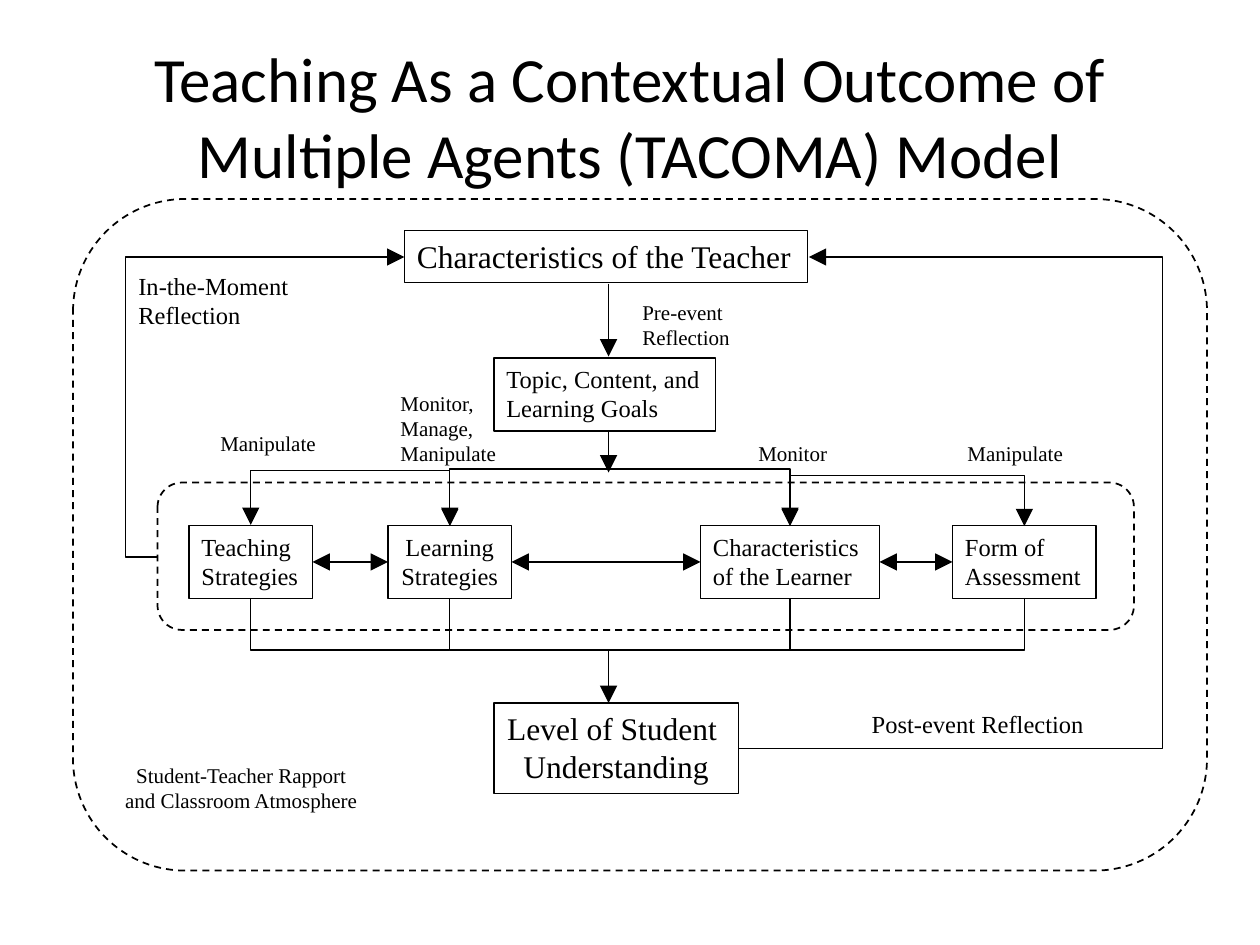
import pptx
import pptx.dml.color
import pptx.enum.dml
import pptx.enum.shapes
import pptx.enum.text
import pptx.oxml
import pptx.util
from pptx.util import Inches

BLACK = pptx.dml.color.RGBColor(0, 0, 0)
TITLE_FONT = "Calibri"
BODY_FONT = "Times New Roman"
LEFT = pptx.enum.text.PP_ALIGN.LEFT
CENTER = pptx.enum.text.PP_ALIGN.CENTER
SHAPES = pptx.enum.shapes.MSO_SHAPE
CONNECTORS = pptx.enum.shapes.MSO_CONNECTOR
FLAT = 0.01


def write_text(shape, text, size, align=LEFT, wrap=False, font=BODY_FONT):
    frame = shape.text_frame
    frame.text = text
    frame.word_wrap = wrap
    for paragraph in frame.paragraphs:
        paragraph.alignment = align
        for run in paragraph.runs:
            run.font.name = font
            run.font.size = pptx.util.Pt(size)
            run.font.color.rgb = BLACK


def add_outline(slide, kind, left, top, width, height, weight=1.0, dashed=False):
    shape = slide.shapes.add_shape(
        kind, Inches(left), Inches(top), Inches(width), Inches(height))
    shape.shadow.inherit = False
    shape.fill.background()
    shape.line.color.rgb = BLACK
    shape.line.width = pptx.util.Pt(weight)
    if dashed:
        shape.line.dash_style = pptx.enum.dml.MSO_LINE.DASH
    return shape


def add_box(slide, text, left, top, width, height, size=14, align=LEFT, weight=1.0):
    shape = add_outline(slide, SHAPES.RECTANGLE, left, top, width, height, weight)
    write_text(shape, text, size, align)
    shape.text_frame.vertical_anchor = pptx.enum.text.MSO_ANCHOR.TOP
    shape.text_frame.auto_size = pptx.enum.text.MSO_AUTO_SIZE.SHAPE_TO_FIT_TEXT
    return shape


def add_label(slide, text, left, top, width, height, size=12, align=LEFT, wrap=False):
    label = slide.shapes.add_textbox(
        Inches(left), Inches(top), Inches(width), Inches(height))
    write_text(label, text, size, align, wrap)
    label.text_frame.auto_size = pptx.enum.text.MSO_AUTO_SIZE.SHAPE_TO_FIT_TEXT


def add_line(slide, start, end, heads=("tailEnd",), kind=CONNECTORS.STRAIGHT):
    line = slide.shapes.add_connector(
        kind, Inches(start[0]), Inches(start[1]), Inches(end[0]), Inches(end[1]))
    line.line.color.rgb = BLACK
    line.line.width = pptx.util.Pt(0.75)
    outline = line.line._get_or_add_ln()
    for head in heads:
        arrow = pptx.oxml.xmlchemy.OxmlElement("a:" + head)
        arrow.set("type", "triangle")
        arrow.set("w", "lg")
        arrow.set("len", "lg")
        outline.append(arrow)
    line._element.spPr.append(pptx.oxml.xmlchemy.OxmlElement("a:effectLst"))
    return line


def set_bend(line, ratio):
    guide = pptx.oxml.xmlchemy.OxmlElement("a:gd")
    guide.set("name", "adj1")
    guide.set("fmla", f"val {round(ratio * 100000)}")
    line._element.spPr.prstGeom.get_or_add_avLst().append(guide)


def add_elbow(slide, start, end, bend_x):
    line = add_line(slide, start, end, kind=CONNECTORS.ELBOW)
    set_bend(line, (bend_x - start[0]) / (end[0] - start[0]))


def add_bracket(slide, left, right, top, offset, heads=()):
    middle, span = (left + right) / 2, right - left
    line = add_line(slide, (middle - FLAT / 2, top + span / 2),
                    (middle + FLAT / 2, top - span / 2), heads, CONNECTORS.ELBOW)
    line._element.spPr.xfrm.set("rot", str(90 * 60000))
    set_bend(line, offset / FLAT)


def fill_title(slide, left, top, width, height):
    title = slide.shapes.title
    title.left, title.top = Inches(left), Inches(top)
    title.width, title.height = Inches(width), Inches(height)
    write_text(title, "Teaching As a Contextual Outcome of Multiple Agents (TACOMA) Model",
               36, CENTER, True, TITLE_FONT)
    title.text_frame.vertical_anchor = pptx.enum.text.MSO_ANCHOR.MIDDLE


def add_context(slide, left, top, width, height):
    frame = add_outline(slide, SHAPES.ROUNDED_RECTANGLE, left, top, width, height, dashed=True)
    frame.adjustments[0] = 0.167
    add_label(slide, "Student-Teacher Rapport\nand Classroom Atmosphere",
              left + 0.25, top + 4.42, 2.17, 0.5, align=CENTER, wrap=True)


def add_planning(slide, left, top):
    axis = left + 1.62
    add_box(slide, "Characteristics of the Teacher", left, top, 3.2, 0.41, 18, weight=0.75)
    add_box(slide, "Topic, Content, and\nLearning Goals", left + 0.71, top + 1.01, 1.76, 0.58)
    add_label(slide, "Pre-event\nReflection", left + 1.79, top + 0.5, 0.9, 0.5, wrap=True)
    add_line(slide, (axis, top + 0.42), (axis, top + 1))
    add_line(slide, (axis, top + 1.59), (axis, top + 1.92))


def add_agents(slide, left, top, width, height):
    add_outline(slide, SHAPES.FLOWCHART_ALTERNATE_PROCESS, left, top, width, height, dashed=True)
    agents = [
        ("Teaching\nStrategies", 0.25, 0.98, LEFT, 1),
        ("Learning\nStrategies", 1.83, 0.98, CENTER, 0.75),
        ("Characteristics\nof the Learner", 4.31, 1.42, LEFT, 1),
        ("Form of\nAssessment", 6.31, 1.14, LEFT, 1),
    ]
    box_top, box_height = top + 0.34, 0.58
    boxes = [add_box(slide, text, left + offset, box_top, box_width, box_height,
                     align=align, weight=weight)
             for text, offset, box_width, align, weight in agents]
    centers = [left + offset + box_width / 2 for _, offset, box_width, _, _ in agents]
    both = ("headEnd", "tailEnd")
    rises, drop = (-0.44, -0.45, -0.4), 0.42
    for index, rise in enumerate(rises):
        ends = centers[index], centers[index + 1]
        add_bracket(slide, *ends, box_top, rise, both)
        add_bracket(slide, *ends, box_top + box_height, drop)
        arrow = add_line(slide, (ends[0], box_top), (ends[1], box_top), both)
        arrow.begin_connect(boxes[index], 3)
        arrow.end_connect(boxes[index + 1], 1)
    actions = [
        ("Manipulate", 0.4, -0.46, 0.96, 0.3),
        ("Monitor,\nManage,\nManipulate", 1.83, -0.78, 0.96, 0.7),
        ("Monitor", 4.67, -0.38, 0.75, 0.3),
        ("Manipulate", 6.33, -0.38, 0.96, 0.3),
    ]
    for text, x, y, label_width, label_height in actions:
        add_label(slide, text, left + x, top + y, label_width, label_height)


def add_outcome(slide, left, top):
    add_line(slide, (left + 0.91, top - 0.41), (left + 0.91, top))
    add_box(slide, "Level of Student \nUnderstanding", left, top, 1.94, 0.72, 18, CENTER, 0.75)


def add_reflection(slide, left, top, right):
    add_elbow(slide, (left + 0.25, top + 2.38), (left + 2.21, top), left)
    add_label(slide, "In-the-Moment\nReflection", left, top + 0.06, 1.44, 0.57, 14)
    add_elbow(slide, (right - 3.37, top + 3.9), (right - 2.81, top), right)
    add_label(slide, "Post-event Reflection", right - 2.41, top + 3.54, 2, 0.33, 14, wrap=True)


def main():
    presentation = pptx.Presentation()
    presentation.slide_width, presentation.slide_height = Inches(10), Inches(7.5)
    slide = presentation.slides.add_slide(presentation.slide_layouts[5])
    add_context(slide, 0.58, 1.58, 9, 5.33)
    fill_title(slide, 0.75, 0.5, 8.5, 0.83)
    add_planning(slide, 3.21, 1.83)
    add_agents(slide, 1.25, 3.83, 7.75, 1.17)
    add_outcome(slide, 3.92, 5.58)
    add_reflection(slide, 1, 2.04, 9.23)
    presentation.save("out.pptx")


if __name__ == "__main__":
    main()
